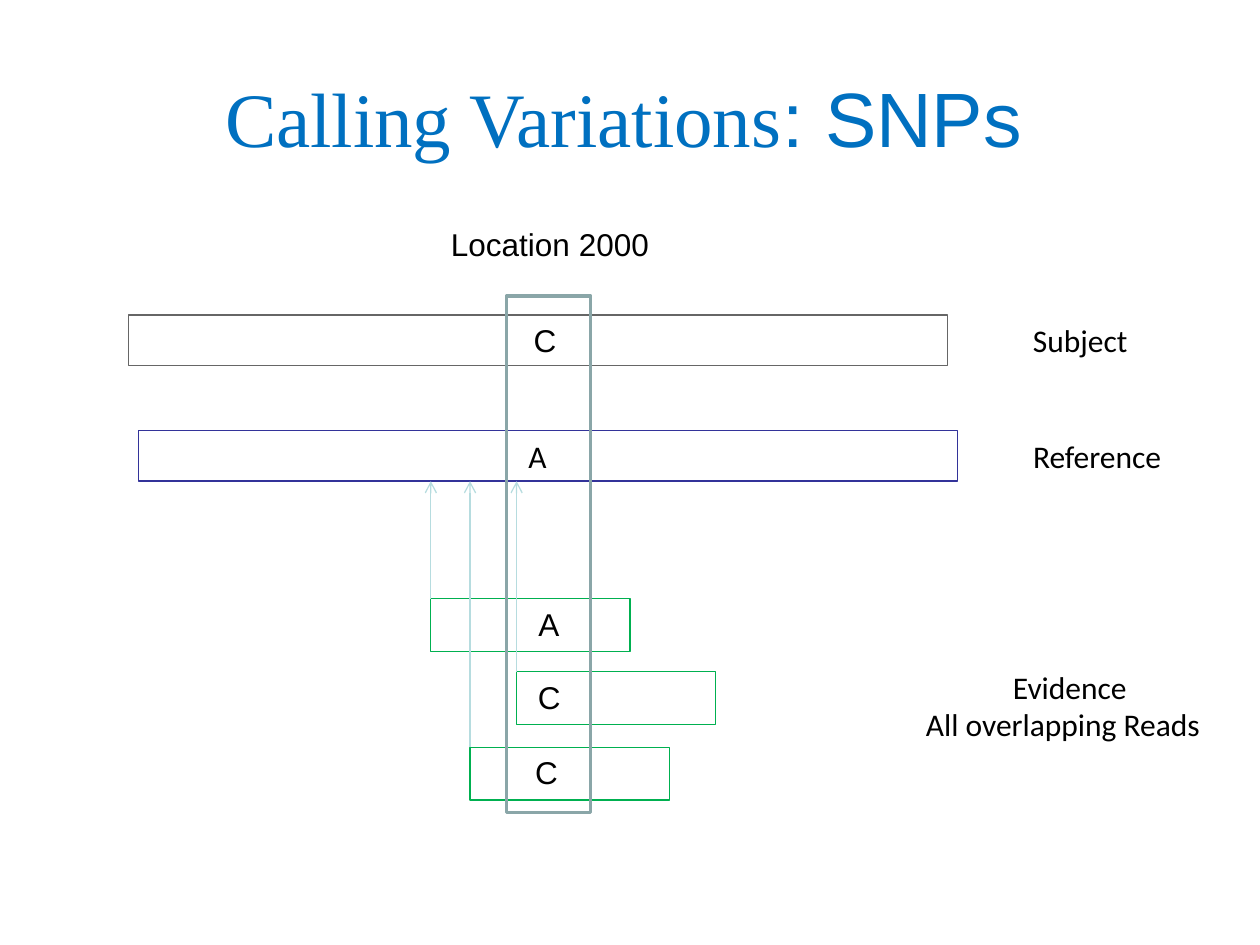
from dataclasses import dataclass

from lxml import etree
from pptx import Presentation
from pptx.dml.color import RGBColor
from pptx.enum.shapes import MSO_CONNECTOR, MSO_SHAPE
from pptx.enum.text import MSO_ANCHOR, PP_ALIGN
from pptx.oxml.ns import qn
from pptx.slide import Slide
from pptx.util import Pt

RECTANGLE = MSO_SHAPE.RECTANGLE
STRAIGHT = MSO_CONNECTOR.STRAIGHT
LEFT, CENTER = PP_ALIGN.LEFT, PP_ALIGN.CENTER
TOP, MIDDLE = MSO_ANCHOR.TOP, MSO_ANCHOR.MIDDLE

COLORS = {
    "title": "0070C0",
    "text": "000000",
    "subject": "666666",
    "reference": "333399",
    "read": "00B050",
    "location": "8AA6A8",
    "arrow": "B6DCDF",
}
BODY_SIZE = 18
LINE_WIDTH = 0.75
LABEL_HEIGHT = 28.8
SEQUENCE_WIDTH = 468
READ_WIDTH, READ_HEIGHT = 113.8, 30.2
REFERENCE_BOTTOM = 275


@dataclass(frozen=True)
class Bar:
    left: float
    top: float
    width: float
    height: float
    color: str
    base: str = ""
    indent: float = 0
    font: str = "Arial"
    line_width: float = LINE_WIDTH


@dataclass(frozen=True)
class Label:
    text: str
    left: float
    top: float
    width: float
    font: str = "Calibri"
    wrap: bool = True


def read_bar(left: float, top: float, base: str, indent: float) -> Bar:
    return Bar(left, top, READ_WIDTH, READ_HEIGHT, "read", base, indent)


SEQUENCES = [
    Bar(73.4, 180, SEQUENCE_WIDTH, LABEL_HEIGHT, "subject", "C", 231.5),
    Bar(79.2, 246.2, SEQUENCE_WIDTH, LABEL_HEIGHT, "reference", "A", 222.8, "Calibri"),
]
READS = [
    read_bar(246.2, 342, "A", 61.5),
    read_bar(295.2, 383.8, "C", 12.2),
    read_bar(268.6, 427, "C", 37.2),
]
LOCATION = Bar(289.4, 169.2, 48.2, 295.2, "location", line_width=2)
LABELS = [
    Label("Reference", 583.2, 246.2, 90),
    Label("Subject", 583.2, 180, 113),
    Label("All overlapping Reads", 522, 399.6, 172.8, wrap=False),
    Label("Evidence", 571.7, 378, 90),
    Label("Location 2000", 250.6, 125.3, 128.9, "Arial", False),
]


def color(name: str) -> RGBColor:
    return RGBColor.from_string(COLORS[name])


def format_run(run, font: str, size: float, color_name: str) -> None:
    run.font.name = font
    run.font.size = Pt(size)
    run.font.color.rgb = color(color_name)


def add_title(slide: Slide) -> None:
    shape = slide.shapes.add_textbox(Pt(32.4), Pt(21.6), Pt(648), Pt(90))
    text_frame = shape.text_frame
    text_frame.word_wrap = True
    text_frame.vertical_anchor = MIDDLE
    paragraph = text_frame.paragraphs[0]
    paragraph.alignment = CENTER
    for text, font in (("Calling Variations", "Times New Roman"), (": SNPs", "Arial")):
        run = paragraph.add_run()
        run.text = text
        format_run(run, font, 44, "title")


def add_bar(slide: Slide, bar: Bar) -> None:
    """Draw an outlined bar, its base letter set in by the bar's indent."""
    shape = slide.shapes.add_shape(
        RECTANGLE, Pt(bar.left), Pt(bar.top), Pt(bar.width), Pt(bar.height)
    )
    shape.shadow.inherit = False
    shape.fill.background()
    shape.line.color.rgb = color(bar.color)
    shape.line.width = Pt(bar.line_width)
    if bar.base:
        text_frame = shape.text_frame
        text_frame.text = bar.base
        text_frame.margin_left = Pt(bar.indent)
        text_frame.vertical_anchor = TOP
        paragraph = text_frame.paragraphs[0]
        paragraph.alignment = LEFT
        format_run(paragraph.runs[0], bar.font, BODY_SIZE, "text")


def add_label(slide: Slide, label: Label) -> None:
    shape = slide.shapes.add_textbox(
        Pt(label.left), Pt(label.top), Pt(label.width), Pt(LABEL_HEIGHT)
    )
    text_frame = shape.text_frame
    text_frame.text = label.text
    text_frame.word_wrap = label.wrap
    format_run(text_frame.paragraphs[0].runs[0], label.font, BODY_SIZE, "text")


def add_alignment_arrow(slide: Slide, read: Bar) -> None:
    """Point from the start of a read up to its place on the reference."""
    connector = slide.shapes.add_connector(
        STRAIGHT, Pt(read.left), Pt(read.top), Pt(read.left), Pt(REFERENCE_BOTTOM)
    )
    connector.line.color.rgb = color("arrow")
    connector.line.width = Pt(LINE_WIDTH)
    etree.SubElement(connector.line._get_or_add_ln(), qn("a:tailEnd"), type="arrow")
    etree.SubElement(connector._element.spPr, qn("a:effectLst"))


def main() -> None:
    presentation = Presentation()
    presentation.slide_width, presentation.slide_height = Pt(720), Pt(540)
    slide = presentation.slides.add_slide(presentation.slide_layouts[6])
    add_title(slide)
    for bar in [*SEQUENCES, *READS, LOCATION]:
        add_bar(slide, bar)
    for label in LABELS:
        add_label(slide, label)
    for read in READS:
        add_alignment_arrow(slide, read)
    presentation.save("out.pptx")


if __name__ == "__main__":
    main()
